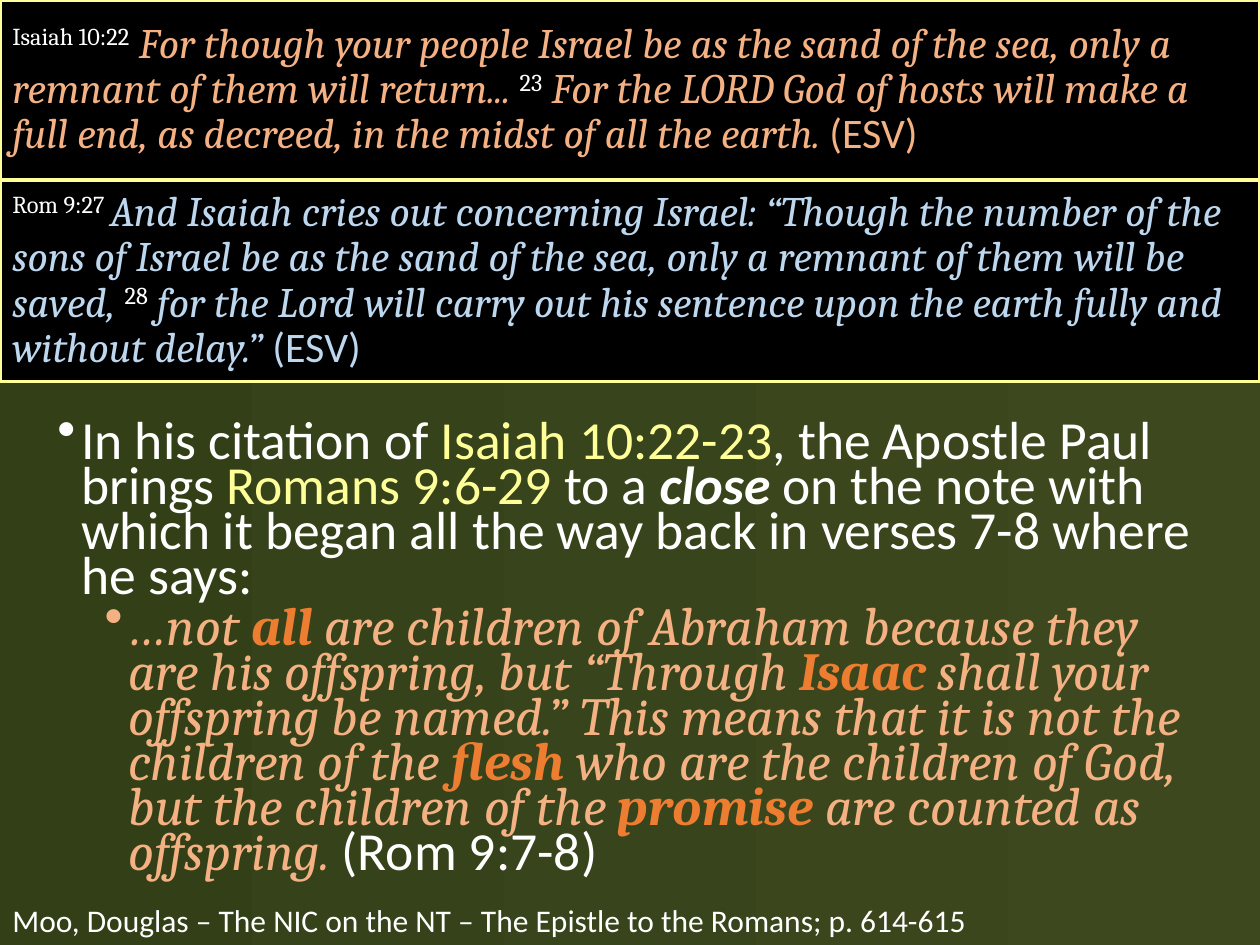
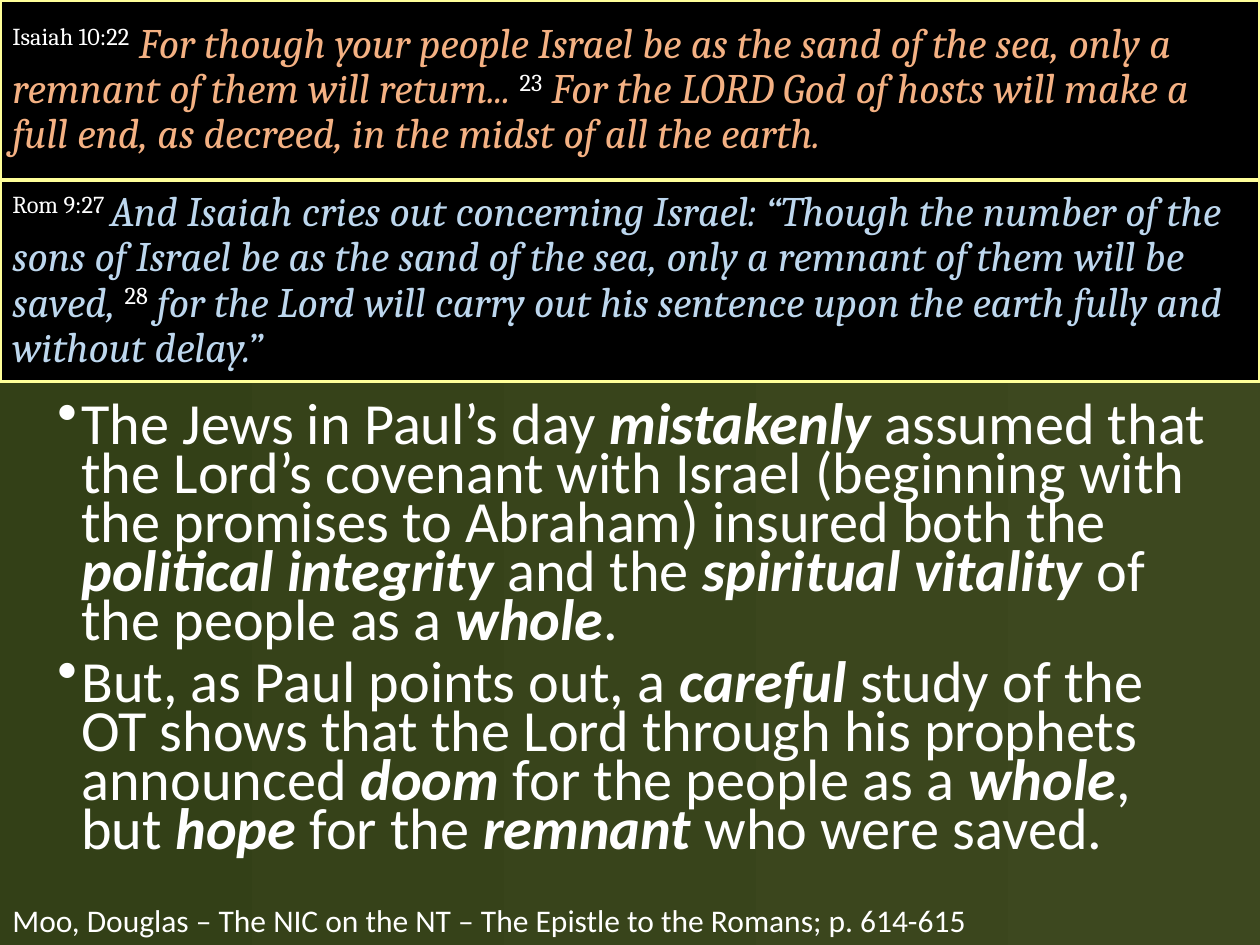
from lxml import etree
from pptx import Presentation
from pptx import util as u
from pptx.dml.color import RGBColor
from pptx.enum import shapes, text
from pptx.oxml.ns import qn

COLORS = {
    "field_light": "3D481F",
    "field_dark": "334017",
    "verse_fill": "000000",
    "border": "FFFF99",
    "white": "FFFFFF",
    "peach": "F4B183",
    "orange": "ED7D31",
    "sky": "BDD7EE",
}
SANS, SERIF = "Calibri", "Cambria"

# Each style holds the keyword arguments of add_span.
STYLES = {
    "plain": {},
    "strong": dict(bold=True, italic=True),
    "reference": dict(color="border"),
    "number": dict(name=SERIF, raised=True),
    "isaiah": dict(name=SERIF, color="peach", italic=True),
    "isaiah_version": dict(color="peach"),
    "stress": dict(name=SERIF, color="orange", bold=True, italic=True),
    "romans": dict(name=SERIF, color="sky", italic=True),
    "romans_version": dict(color="sky"),
}

SLIDE_WIDTH, SLIDE_HEIGHT = u.Cm(25.4), u.Cm(19.05)
ISAIAH_HEIGHT, ROMANS_HEIGHT = u.Cm(3.63), u.Cm(4.06)
BODY_LEFT, BODY_WIDTH, BODY_BOTTOM = u.Cm(0.91), u.Cm(23.85), u.Cm(18.11)
FOOTER_TOP = u.Cm(18.03)
HANGING = u.Cm(0.48)
LEVEL_INDENTS = [HANGING, u.Cm(1.43)]
LEVEL_GAPS = [u.Pt(7.5), u.Pt(3.8)]

ISAIAH = [
    ("Isaiah 10:22", "number"),
    (" For though your people Israel be as the sand of the sea, only a "
     "remnant of them will return... ", "isaiah"),
    ("23", "number"),
    (" For the LORD God of hosts will make a full end, as decreed, "
     "in the midst of all the earth.", "isaiah"),
]
ROMANS = [
    ("Rom 9:27 ", "number"),
    ("And Isaiah cries out concerning Israel: “Though the number of the sons "
     "of Israel be as the sand of the sea, only a remnant of them will be "
     "saved, ", "romans"),
    ("28", "number"),
    (" for the Lord will carry out his sentence upon the earth fully and "
     "without delay.”", "romans"),
]
FOOTER = "Moo, Douglas – The NIC on the NT – The Epistle to the Romans; p. 614-615"

# Body paragraphs: (level, spans)
CITATION = [
    (0, [
        ("In his citation of ", "plain"),
        ("Isaiah 10:22-23", "reference"),
        (", the Apostle Paul brings ", "plain"),
        ("Romans 9:6-29", "reference"),
        (" to a ", "plain"),
        ("close", "strong"),
        (" on the note with which it began all the way back in verses 7-8 "
         "where he says:", "plain"),
    ]),
    (1, [
        ("…not ", "isaiah"),
        ("all", "stress"),
        (" are children of Abraham because they are his offspring, but "
         "“Through ", "isaiah"),
        ("Isaac", "stress"),
        (" shall your offspring be named.” This means that it is not the "
         "children of the ", "isaiah"),
        ("flesh", "stress"),
        (" who are the children of God, but the children of the ", "isaiah"),
        ("promise", "stress"),
        (" are counted as offspring. ", "isaiah"),
        ("(Rom 9:7-8)", "plain"),
    ]),
]
REMNANT = [
    (0, [
        ("The Jews in Paul’s day ", "plain"),
        ("mistakenly", "strong"),
        (" assumed that the Lord’s covenant with Israel (beginning with the "
         "promises to Abraham) insured both the ", "plain"),
        ("political integrity ", "strong"),
        ("and the ", "plain"),
        ("spiritual vitality ", "strong"),
        ("of the people as a ", "plain"),
        ("whole", "strong"),
        (".", "plain"),
    ]),
    (0, [
        ("But, as Paul points out, a ", "plain"),
        ("careful", "strong"),
        (" study of the OT shows that the Lord through his prophets "
         "announced ", "plain"),
        ("doom", "strong"),
        (" for the people as a ", "plain"),
        ("whole", "strong"),
        (", but ", "plain"),
        ("hope", "strong"),
        (" for the ", "plain"),
        ("remnant", "strong"),
        (" who were saved.", "plain"),
    ]),
]


def rgb(key):
    return RGBColor.from_string(COLORS[key])


def add_span(para, content, size, name=SANS, color="white", bold=False,
             italic=False, raised=False):
    span = para.add_run()
    span.text = content
    font = span.font
    font.size, font.name = u.Pt(size), name
    font.bold, font.italic = bold, italic
    font.color.rgb = rgb(color)
    if raised:
        span._r.get_or_add_rPr().set("baseline", "30000")


def add_spans(para, spans, size):
    for content, style in spans:
        add_span(para, content, size, **STYLES[style])


def set_bullet(para, level):
    para.level = level
    properties = para._p.get_or_add_pPr()
    properties.set("marL", str(LEVEL_INDENTS[level]))
    properties.set("indent", str(-HANGING))
    etree.SubElement(properties, qn("a:buChar")).set("char", "•")


def add_verse(page, top, height, spans):
    """Add a full-width bordered band with a Bible passage."""
    band = page.shapes.add_shape(
        shapes.MSO_SHAPE.RECTANGLE, 0, top, SLIDE_WIDTH, height)
    band.shadow.inherit = False
    band.fill.solid()
    band.fill.fore_color.rgb = rgb("verse_fill")
    band.line.color.rgb = rgb("border")
    band.line.width = u.Pt(2)
    frame = band.text_frame
    frame.word_wrap = True
    frame.vertical_anchor = text.MSO_ANCHOR.MIDDLE
    para = frame.paragraphs[0]
    para.alignment = text.PP_ALIGN.LEFT
    para.line_spacing = 0.9
    add_spans(para, spans, 24)


def add_text_frame(page, left, top, width, height):
    frame = page.shapes.add_textbox(left, top, width, height).text_frame
    frame.word_wrap = True
    return frame


def add_body(page, top, size, paragraphs):
    frame = add_text_frame(page, BODY_LEFT, top, BODY_WIDTH, BODY_BOTTOM - top)
    for index, (level, spans) in enumerate(paragraphs):
        para = frame.add_paragraph() if index else frame.paragraphs[0]
        set_bullet(para, level)
        para.line_spacing = 0.7
        if index:
            para.space_before = LEVEL_GAPS[level]
        add_spans(para, spans, size)


def add_footer(page):
    frame = add_text_frame(
        page, 0, FOOTER_TOP, SLIDE_WIDTH, SLIDE_HEIGHT - FOOTER_TOP)
    add_span(frame.paragraphs[0], FOOTER, 18)


def set_background(page):
    fill = page.background.fill
    fill.gradient()
    fill.gradient_angle = 180
    for stop, key in zip(fill.gradient_stops, ("field_light", "field_dark")):
        stop.color.rgb = rgb(key)


def add_page(deck, isaiah, romans, body_top, body_size, paragraphs):
    page = deck.slides.add_slide(deck.slide_layouts[6])
    set_background(page)
    add_verse(page, 0, ISAIAH_HEIGHT, isaiah)
    add_body(page, body_top, body_size, paragraphs)
    add_footer(page)
    add_verse(page, ISAIAH_HEIGHT, ROMANS_HEIGHT, romans)


def main():
    deck = Presentation()
    deck.slide_width, deck.slide_height = SLIDE_WIDTH, SLIDE_HEIGHT
    add_page(deck,
             ISAIAH + [(" ", "isaiah"), ("(ESV)", "isaiah_version")],
             ROMANS + [(" ", "romans"), ("(ESV)", "romans_version")],
             u.Cm(8.41), 30.6, CITATION)
    add_page(deck, ISAIAH, ROMANS, u.Cm(8.05), 33.3, REMNANT)
    deck.save("out.pptx")


if __name__ == "__main__":
    main()
